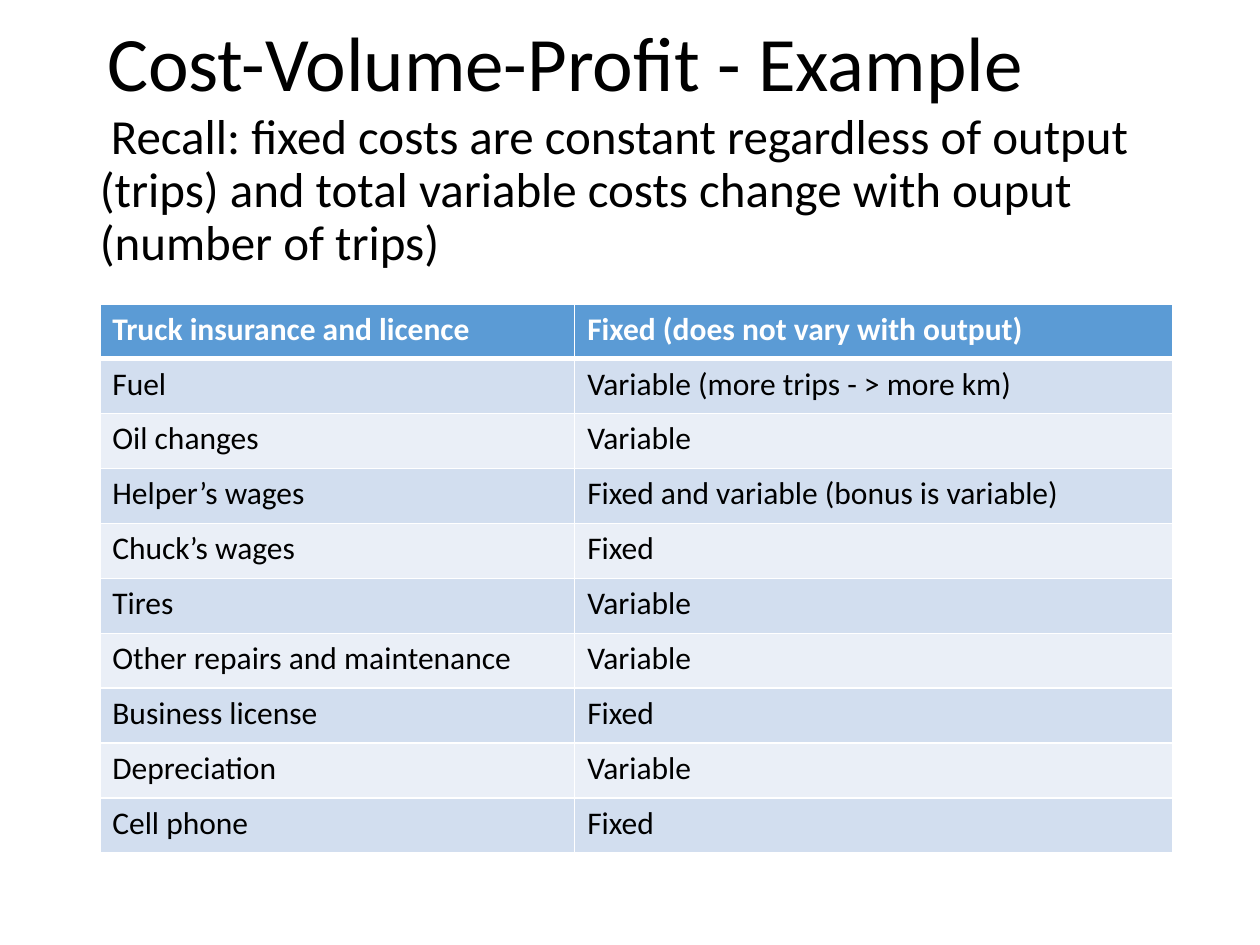
"""Build the Cost-Volume-Profit example slide with its table of cost types."""
import dataclasses

import lxml.etree
import pptx
import pptx.dml.color
import pptx.enum.text
import pptx.oxml.ns
import pptx.util

COLORS = {
    "text": "000000",
    "white": "FFFFFF",
    "header": "5B9BD5",
    "dark_band": "D2DEEF",
    "light_band": "EAEFF7",
}
FONT = "Calibri"
COLUMN_WIDTHS = (271.4, 342)
ROW_HEIGHT = 31.4


@dataclasses.dataclass
class Cost:
    """A cost item and how it behaves."""

    item: str
    behaviour: str


COSTS = [
    Cost("Truck insurance and licence", "Fixed (does not vary with output)"),
    Cost("Fuel", "Variable (more trips - > more km)"),
    Cost("Oil changes", "Variable"),
    Cost("Helper’s wages", "Fixed and variable (bonus is variable)"),
    Cost("Chuck’s wages", "Fixed"),
    Cost("Tires", "Variable"),
    Cost("Other repairs and maintenance", "Variable"),
    Cost("Business license", "Fixed"),
    Cost("Depreciation", "Variable"),
    Cost("Cell phone", "Fixed"),
]


def rgb(name: str) -> pptx.dml.color.RGBColor:
    """Look up a named color."""
    return pptx.dml.color.RGBColor.from_string(COLORS[name])


def write(text_frame, text: str, size: float, color: str = "text", bold: bool = False):
    """Write one formatted paragraph and return it."""
    text_frame.text = text
    paragraph = text_frame.paragraphs[0]
    paragraph.font.name = FONT
    paragraph.font.size = pptx.util.Pt(size)
    paragraph.font.bold = bold
    paragraph.font.color.rgb = rgb(color)
    return paragraph


def set_borders(cell, top: float, bottom: float) -> None:
    """Give a cell white borders, with the sides one point wide."""
    properties = cell._tc.get_or_add_tcPr()
    widths = {"lnL": 1, "lnR": 1, "lnT": top, "lnB": bottom}
    for index, (side, width) in enumerate(widths.items()):
        line = lxml.etree.Element(pptx.oxml.ns.qn(f"a:{side}"), w=str(pptx.util.Pt(width)))
        fill = lxml.etree.SubElement(line, pptx.oxml.ns.qn("a:solidFill"))
        lxml.etree.SubElement(fill, pptx.oxml.ns.qn("a:srgbClr"), val=COLORS["white"])
        properties.insert(index, line)


def add_title(slide, text: str) -> None:
    """Place and format the title."""
    title = slide.shapes.title
    title.left, title.top = pptx.util.Pt(54), pptx.util.Pt(8.6)
    title.width, title.height = pptx.util.Pt(621), pptx.util.Pt(59)
    paragraph = write(title.text_frame, text, 44)
    paragraph.alignment = pptx.enum.text.PP_ALIGN.LEFT
    paragraph.line_spacing = 0.9
    title.text_frame.vertical_anchor = pptx.enum.text.MSO_ANCHOR.MIDDLE


def add_recall(slide, text: str) -> None:
    """Add the reminder below the title."""
    box = slide.shapes.add_textbox(
        pptx.util.Pt(50), pptx.util.Pt(60.5), pptx.util.Pt(621), pptx.util.Pt(106.5)
    )
    box.text_frame.word_wrap = True
    paragraph = write(box.text_frame, text, 28)
    paragraph.line_spacing = 0.9
    paragraph.space_before = pptx.util.Pt(10)


def add_cost_table(slide, costs: list[Cost]) -> None:
    """Add the banded table of costs, the first being the header row."""
    table = slide.shapes.add_table(
        len(costs), len(COLUMN_WIDTHS), pptx.util.Pt(57), pptx.util.Pt(173.6),
        pptx.util.Pt(sum(COLUMN_WIDTHS)), pptx.util.Pt(ROW_HEIGHT * len(costs)),
    ).table
    for column, width in zip(table.columns, COLUMN_WIDTHS):
        column.width = pptx.util.Pt(width)
    for index, (row, cost) in enumerate(zip(table.rows, costs)):
        row.height = pptx.util.Pt(ROW_HEIGHT)
        is_header = index == 0
        band = "header" if is_header else "dark_band" if index % 2 else "light_band"
        for cell, text in zip(row.cells, dataclasses.astuple(cost)):
            cell.fill.solid()
            cell.fill.fore_color.rgb = rgb(band)
            write(cell.text_frame, text, 18, "white" if is_header else "text", is_header)
            set_borders(cell, 3 if index == 1 else 1, 3 if is_header else 1)


def main() -> None:
    """Build and save the presentation."""
    presentation = pptx.Presentation()
    presentation.slide_width = pptx.util.Pt(720)
    presentation.slide_height = pptx.util.Pt(540)
    slide = presentation.slides.add_slide(presentation.slide_layouts[5])
    add_title(slide, "Cost-Volume-Profit - Example")
    add_recall(
        slide,
        " Recall: fixed costs are constant regardless of output (trips) "
        "and total variable costs change with ouput (number of trips)",
    )
    add_cost_table(slide, COSTS)
    presentation.save("out.pptx")


if __name__ == "__main__":
    main()
